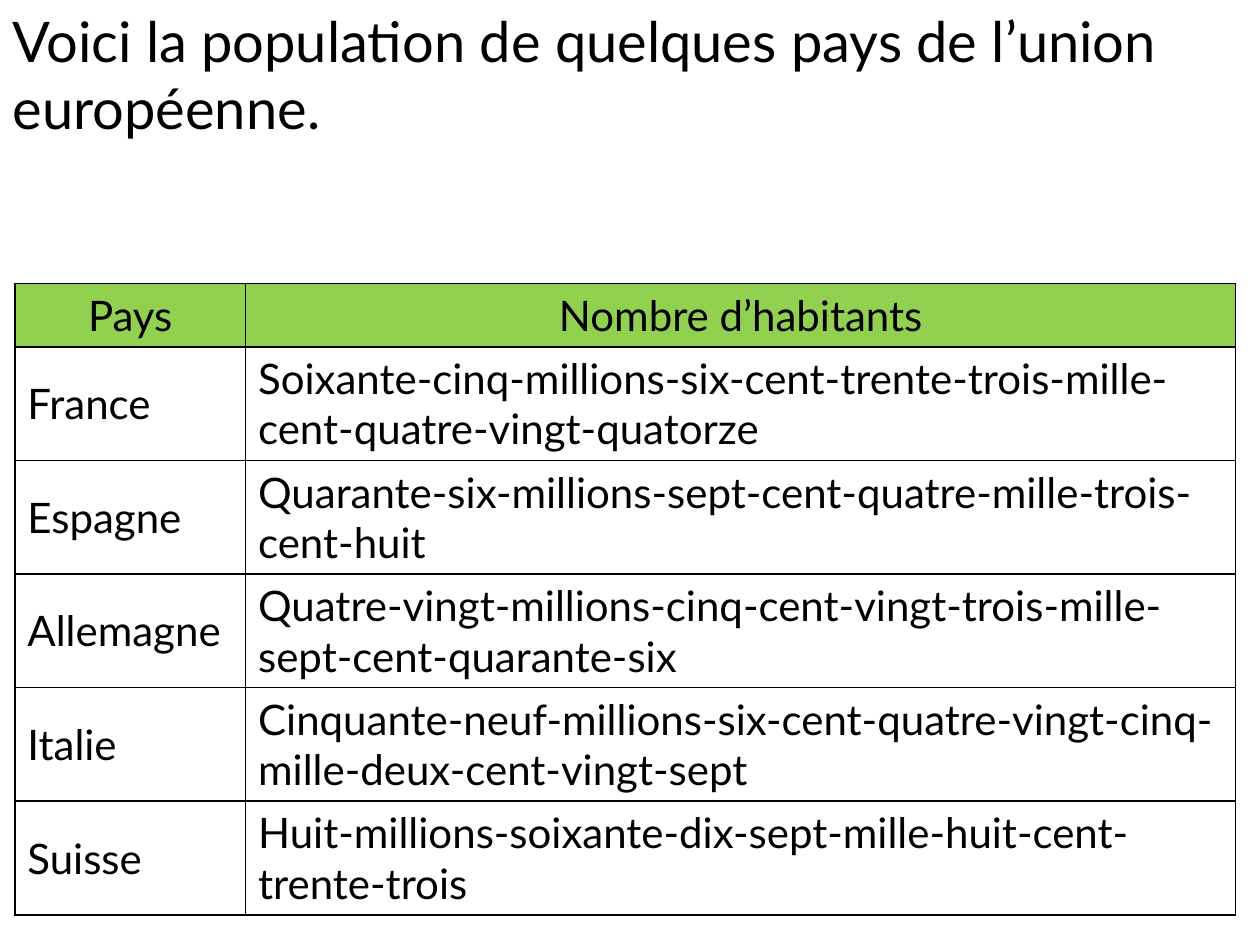
import pptx
import pptx.util
import pptx.dml.color
import pptx.enum.text
import pptx.oxml
import pptx.oxml.ns

Cm = pptx.util.Cm
Pt = pptx.util.Pt
Align = pptx.enum.text.PP_ALIGN
Anchor = pptx.enum.text.MSO_ANCHOR
hues = {"ink": "000000", "head": "92D050", "page": "FFFFFF"}
rows = [
    ("Pays", "Nombre d’habitants"),
    ("France", "Soixante-cinq-millions-six-cent-trente-trois-mille-cent-quatre-vingt-quatorze"),
    ("Espagne", "Quarante-six-millions-sept-cent-quatre-mille-trois-cent-huit"),
    ("Allemagne", "Quatre-vingt-millions-cinq-cent-vingt-trois-mille-sept-cent-quarante-six"),
    ("Italie", "Cinquante-neuf-millions-six-cent-quatre-vingt-cinq-mille-deux-cent-vingt-sept"),
    ("Suisse", "Huit-millions-soixante-dix-sept-mille-huit-cent-trente-trois"),
]


def color(name):
    return pptx.dml.color.RGBColor.from_string(hues[name])


def style(frame, size, align, anchor):
    frame.word_wrap = True
    frame.vertical_anchor = anchor
    for par in frame.paragraphs:
        par.alignment = align
        for run in par.runs:
            run.font.name = "Lato"
            run.font.size = Pt(size)
            run.font.color.rgb = color("ink")


deck = pptx.Presentation()
deck.slide_width, deck.slide_height = Cm(25.4), Cm(19.05)
slide = deck.slides.add_slide(deck.slide_layouts[5])

title = slide.shapes.title
title.left, title.top, title.width, title.height = Cm(0), Cm(0), Cm(25.4), Cm(3)
title.text_frame.text = "Voici la population de quelques pays de l’union européenne."
title.text_frame.auto_size = pptx.enum.text.MSO_AUTO_SIZE.SHAPE_TO_FIT_TEXT
style(title.text_frame, 32, Align.LEFT, Anchor.TOP)

wide = [Cm(4.65), Cm(19.96)]
high = [Cm(1.27)] + [Cm(2.29)] * (len(rows) - 1)
table = slide.shapes.add_table(
    len(rows), len(wide), Cm(0.3), Cm(5.72), sum(wide), sum(high)
).table
for col, size in zip(table.columns, wide):
    col.width = size
for row, size in zip(table.rows, high):
    row.height = size

for r, words in enumerate(rows):
    for c, word in enumerate(words):
        cell = table.cell(r, c)
        cell.text_frame.text = word
        style(cell.text_frame, 24, Align.LEFT if r else Align.CENTER, None)
        cell.vertical_anchor = Anchor.MIDDLE if r else Anchor.TOP
        for run in cell.text_frame.paragraphs[0].runs:
            run.font.bold = False
        cell.fill.solid()
        cell.fill.fore_color.rgb = color("page" if r else "head")
        props = cell._tc.get_or_add_tcPr()
        for spot, side in enumerate("LRTB"):
            line = pptx.oxml.parse_xml(
                f'<a:ln{side} {pptx.oxml.ns.nsdecls("a")} w="{Pt(1)}"><a:solidFill>'
                f'<a:srgbClr val="{hues["ink"]}"/></a:solidFill></a:ln{side}>'
            )
            props.insert(spot, line)

deck.save("out.pptx")
